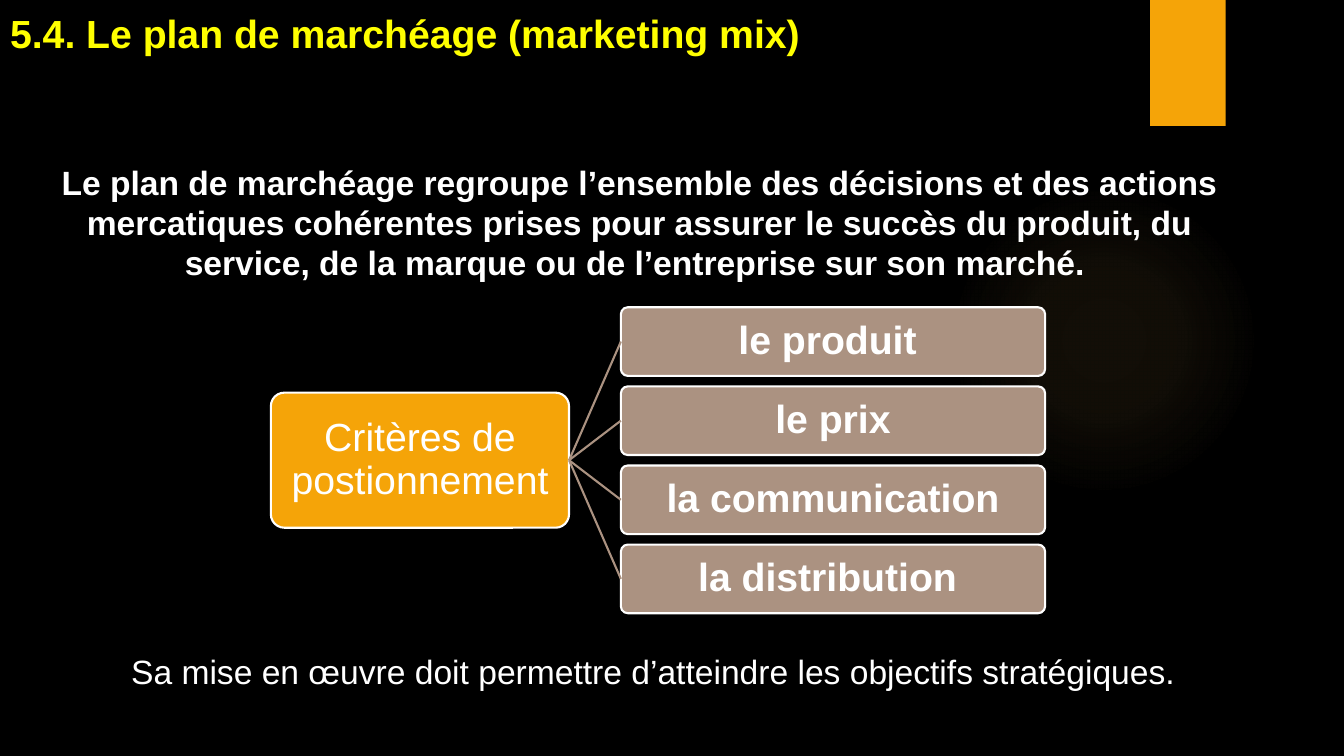
from dataclasses import dataclass

from pptx import Presentation
from pptx.dml.color import RGBColor as RGB
from pptx.enum.shapes import MSO_CONNECTOR as Link, MSO_SHAPE as Form
from pptx.enum.text import MSO_ANCHOR as Anchor, PP_ALIGN as Align
from pptx.oxml import parse_xml
from pptx.oxml.ns import nsdecls
from pptx.util import Pt


@dataclass(frozen=True)
class Theme:
    font: str = "Arial"
    black: RGB = RGB(0, 0, 0)
    white: RGB = RGB(255, 255, 255)
    yellow: RGB = RGB(255, 255, 0)
    orange: RGB = RGB(0xF5, 0xA4, 0x08)
    taupe: RGB = RGB(0xAB, 0x92, 0x81)
    glow: RGB = RGB(0xFA, 0xC9, 0x6A)
    large: int = 28
    small: int = 24
    line: float = 1.5


THEME = Theme()
ITEMS = ["le produit ", "le prix", "la communication", "la distribution "]


def write(shape, text, size, color=THEME.white, bold=False,
          align=Align.CENTER, anchor=Anchor.TOP, pad=(7.2, 3.6), space=1.0):
    frame = shape.text_frame
    across, down = pad
    look = {"word_wrap": True, "vertical_anchor": anchor,
            "margin_left": Pt(across), "margin_right": Pt(across),
            "margin_top": Pt(down), "margin_bottom": Pt(down)}
    for name, value in look.items():
        setattr(frame, name, value)
    para = frame.paragraphs[0]
    para.alignment, para.line_spacing = align, space
    para.space_before = para.space_after = Pt(0)
    run = para.add_run()
    run.text = text
    style = {"name": THEME.font, "size": Pt(size), "bold": bold}
    for name, value in style.items():
        setattr(run.font, name, value)
    run.font.color.rgb = color


def place(shape, box):
    for name, value in zip(("left", "top", "width", "height"), box):
        setattr(shape, name, Pt(value))


def add_shape(slide, form, box, fill):
    shape = slide.shapes.add_shape(form, *map(Pt, box))
    shape.shadow.inherit = False
    shape.fill.solid()
    shape.fill.fore_color.rgb = fill
    shape.line.fill.background()
    return shape


def add_glow(slide, box):
    """Draw a disc that fades out from its centre."""
    disc = add_shape(slide, Form.OVAL, box, THEME.glow)
    stops = "".join(
        f'<a:gs pos="{pos * 1000}"><a:srgbClr val="{THEME.glow}">'
        f'<a:alpha val="{alpha * 1000}"/></a:srgbClr></a:gs>'
        for pos, alpha in ((0, 7), (36, 6), (69, 0), (100, 0)))
    fade = parse_xml(
        f'<a:gradFill {nsdecls("a")} rotWithShape="1"><a:gsLst>{stops}</a:gsLst>'
        '<a:path path="circle"><a:fillToRect l="50000" t="50000" r="50000" '
        'b="50000"/></a:path></a:gradFill>')
    solid = disc.fill._xPr.solidFill if hasattr(disc.fill._xPr, "solidFill") \
        else disc.fill._xPr.find("{*}solidFill")
    solid.getparent().replace(solid, fade)


def add_card(slide, box, text, fill, bold):
    card = add_shape(slide, Form.ROUNDED_RECTANGLE, box, fill)
    card.adjustments[0] = 0.1
    card.line.color.rgb = THEME.white
    card.line.width = Pt(THEME.line)
    write(card, text, THEME.large, bold=bold, anchor=Anchor.MIDDLE,
          pad=(3, 3), space=0.9)
    return card


def join(slide, start, end):
    """Link the right side of one card to the left side of another."""
    link = slide.shapes.add_connector(Link.STRAIGHT, 0, 0, 0, 0)
    link.begin_connect(start, 3)
    link.end_connect(end, 1)
    link.line.color.rgb = THEME.taupe
    link.line.width = Pt(THEME.line)
    link._element.spPr.append(parse_xml(f'<a:effectLst {nsdecls("a")}/>'))


def add_tree(slide):
    left, top, width, height, step = 443.5, 219.5, 303, 49, 56.5
    middle = top + (step * (len(ITEMS) - 1) + height) / 2
    tall = 96.5
    root = add_card(slide, (193.5, middle - tall / 2, 213, tall),
                    "Critères de postionnement", THEME.orange, False)
    for row, text in enumerate(ITEMS):
        box = left, top + row * step, width, height
        join(slide, root, add_card(slide, box, text, THEME.taupe, True))


def add_note(slide, box, text, **look):
    note = slide.shapes.add_textbox(*map(Pt, box))
    write(note, text, THEME.small, **look)


def main():
    deck = Presentation()
    deck.slide_width, deck.slide_height = Pt(960), Pt(540)
    slide = deck.slides.add_slide(deck.slide_layouts[5])
    slide.background.fill.solid()
    slide.background.fill.fore_color.rgb = THEME.black

    add_glow(slide, (677.5, 132, 222, 222))
    add_shape(slide, Form.RECTANGLE, (821.5, 0, 54, 90), THEME.orange)
    title = slide.shapes.title
    place(title, (0, 3, 913, 41))
    write(title, "5.4. Le plan de marchéage (marketing mix)", THEME.large,
          THEME.yellow, bold=True, align=Align.LEFT)
    add_note(slide, (20, 112, 873.5, 94),
             "Le plan de marchéage regroupe l’ensemble des décisions et des "
             "actions mercatiques cohérentes prises pour assurer le succès du "
             "produit, du service, de la marque ou de l’entreprise sur son "
             "marché. ", bold=True)
    add_tree(slide)
    add_note(slide, (39.5, 464.5, 854, 33),
             "Sa mise en œuvre doit permettre d’atteindre les objectifs "
             "stratégiques.", space=0.9)
    deck.save("out.pptx")


if __name__ == "__main__":
    main()
